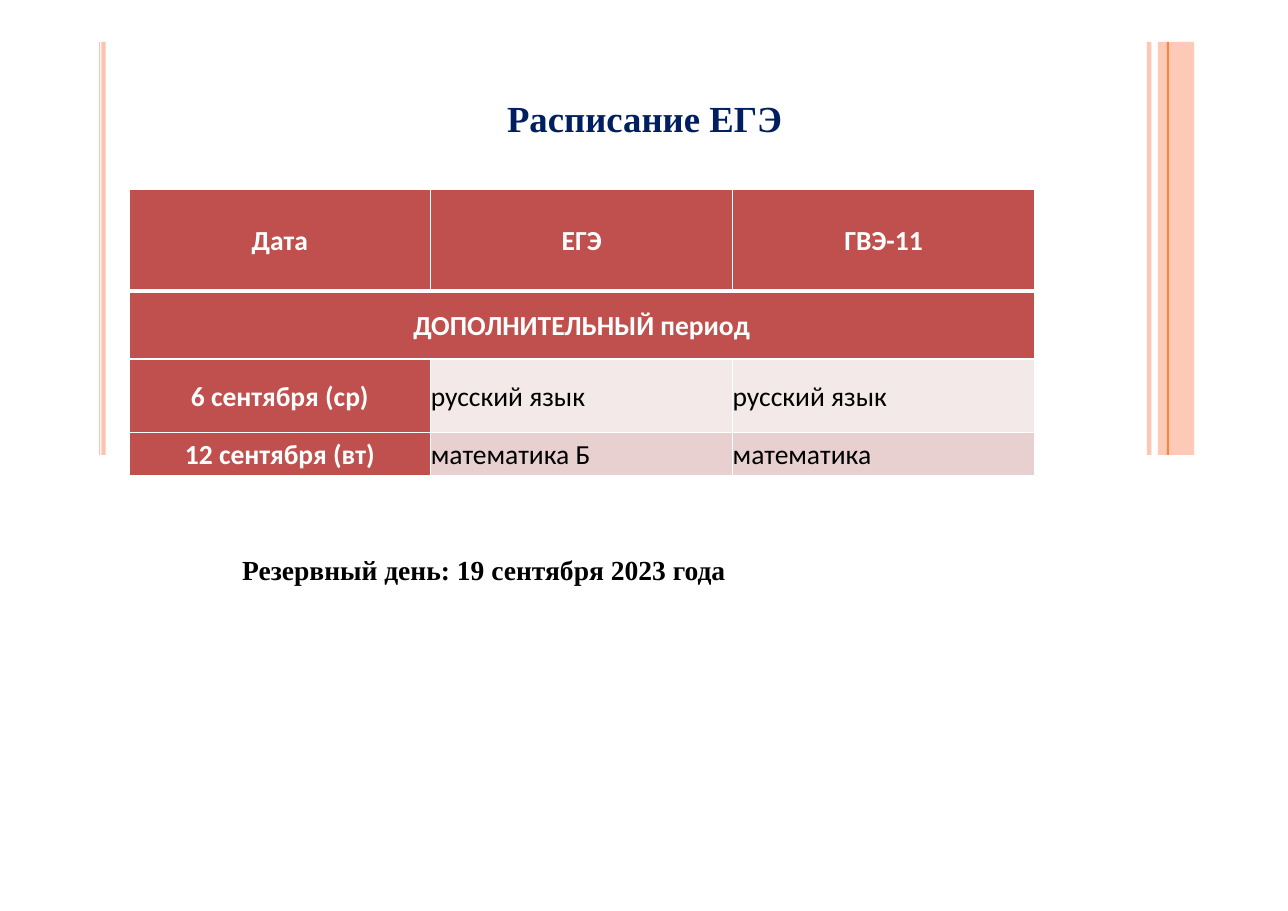
from lxml.etree import SubElement
from pptx import Presentation
from pptx.dml.color import RGBColor
from pptx.enum.shapes import MSO_SHAPE
from pptx.enum.text import MSO_ANCHOR, MSO_AUTO_SIZE, PP_ALIGN
from pptx.oxml import parse_xml
from pptx.oxml.ns import nsdecls, qn
from pptx.util import Pt

PX = 9144  # 100 px to the inch
NAVY = RGBColor(0x00, 0x1F, 0x60)
BLACK = RGBColor(0x00, 0x00, 0x00)
WHITE = RGBColor(0xFF, 0xFF, 0xFF)
PEACH = RGBColor(0xFD, 0xC3, 0xAE)
ORANGE = RGBColor(0xFD, 0x85, 0x36)
BRICK = RGBColor(0xC0, 0x50, 0x4D)
PALE_ROSE = RGBColor(0xF4, 0xE9, 0xE9)
ROSE = RGBColor(0xE8, 0xD0, 0xD0)

BAR_TOP, BAR_HEIGHT = 38, 375
BARS = [  # left, width, colour, opacity in percent
    (1041, 4, PEACH, 93),
    (90, 1, PEACH, 100),
    (92, 4, PEACH, 100),
    (1051, 33, PEACH, 87),
    (1059, 2, ORANGE, 100),
]
SCHEDULE = [
    ("Дата", "ЕГЭ", "ГВЭ-11"),
    ("ДОПОЛНИТЕЛЬНЫЙ период", "", ""),
    ("6 сентября (ср)", "русский язык", "русский язык"),
    ("12 сентября (вт)", "математика Б", "математика"),
]
ROW_HEIGHTS = [92, 62, 67, 39]
COLUMN_WIDTH = 274
SUBJECT_FILLS = {2: PALE_ROSE, 3: ROSE}


def px(*lengths):
    return [length * PX for length in lengths]


def add_run(paragraph, text, font, size, color, bold):
    run = paragraph.add_run()
    run.text = text
    run.font.name = font
    run.font.size = Pt(size)
    run.font.color.rgb = color
    run.font.bold = bold


def add_bar(slide, left, width, color, opacity):
    bar = slide.shapes.add_shape(
        MSO_SHAPE.RECTANGLE, *px(left, BAR_TOP, width, BAR_HEIGHT))
    bar.shadow.inherit = False
    bar.line.fill.background()
    bar.fill.solid()
    bar.fill.fore_color.rgb = color
    if opacity < 100:
        tint = bar.fill._xPr.find(".//" + qn("a:srgbClr"))
        SubElement(tint, qn("a:alpha"), val=str(opacity * 1000))


def add_caption(slide, box, text, size, color, align, inset, wrap):
    frame = slide.shapes.add_textbox(*px(*box)).text_frame
    frame.word_wrap = wrap
    frame.auto_size = MSO_AUTO_SIZE.SHAPE_TO_FIT_TEXT
    frame.margin_left, frame.margin_right = px(inset, inset)
    frame.margin_top, frame.margin_bottom = px(inset // 2, inset // 2)
    paragraph = frame.paragraphs[0]
    paragraph.alignment = align
    add_run(paragraph, text, "Times New Roman", size, color, True)


def set_borders(cell, top, bottom):
    """Draw white cell borders; top and bottom are widths in points."""
    properties = cell._tc.get_or_add_tcPr()
    sides = {"lnL": 1, "lnR": 1, "lnT": top, "lnB": bottom}
    for place, (side, width) in enumerate(sides.items()):
        properties.insert(place, parse_xml(
            f'<a:{side} {nsdecls("a")} w="{Pt(width)}"><a:solidFill>'
            f'<a:srgbClr val="{WHITE}"/></a:solidFill></a:{side}>'))


def fill_cell(cell, text, fill, color, bold, align):
    cell.fill.solid()
    cell.fill.fore_color.rgb = fill
    cell.vertical_anchor = MSO_ANCHOR.MIDDLE
    cell.margin_left = cell.margin_right = 0
    cell.margin_top = cell.margin_bottom = 0
    if text:
        paragraph = cell.text_frame.paragraphs[0]
        paragraph.alignment = align
        paragraph.line_spacing = 1.07
        paragraph.space_after = Pt(6.8)
        add_run(paragraph, text, "Calibri", 18, color, bold)


def add_schedule(slide, left, top):
    rows, columns = len(SCHEDULE), len(SCHEDULE[0])
    table = slide.shapes.add_table(
        rows, columns,
        *px(left, top, COLUMN_WIDTH * columns, sum(ROW_HEIGHTS))).table
    table.first_row = table.horz_banding = False
    for column in table.columns:
        column.width = COLUMN_WIDTH * PX
    for r, entries in enumerate(SCHEDULE):
        table.rows[r].height = ROW_HEIGHTS[r] * PX
        for c, text in enumerate(entries):
            cell = table.cell(r, c)
            if c > 0 and r in SUBJECT_FILLS:
                fill_cell(cell, text, SUBJECT_FILLS[r], BLACK, False, PP_ALIGN.LEFT)
            else:
                fill_cell(cell, text, BRICK, WHITE, True, PP_ALIGN.CENTER)
            set_borders(cell, 3 if r == 1 else 1, 3 if r == 0 else 1)
    table.cell(1, 0).merge(table.cell(1, columns - 1))


def main():
    deck = Presentation()
    deck.slide_width, deck.slide_height = px(1169, 827)
    slide = deck.slides.add_slide(deck.slide_layouts[6])
    for bar in BARS:
        add_bar(slide, *bar)
    add_caption(slide, (259, 87, 652, 40), "Расписание ЕГЭ",
                24, NAVY, PP_ALIGN.CENTER, inset=0, wrap=True)
    add_caption(slide, (210, 497, 463, 40), "Резервный день: 19 сентября 2023 года",
                18, BLACK, PP_ALIGN.LEFT, inset=10, wrap=False)
    add_schedule(slide, 117, 172)
    deck.save("out.pptx")


if __name__ == "__main__":
    main()
